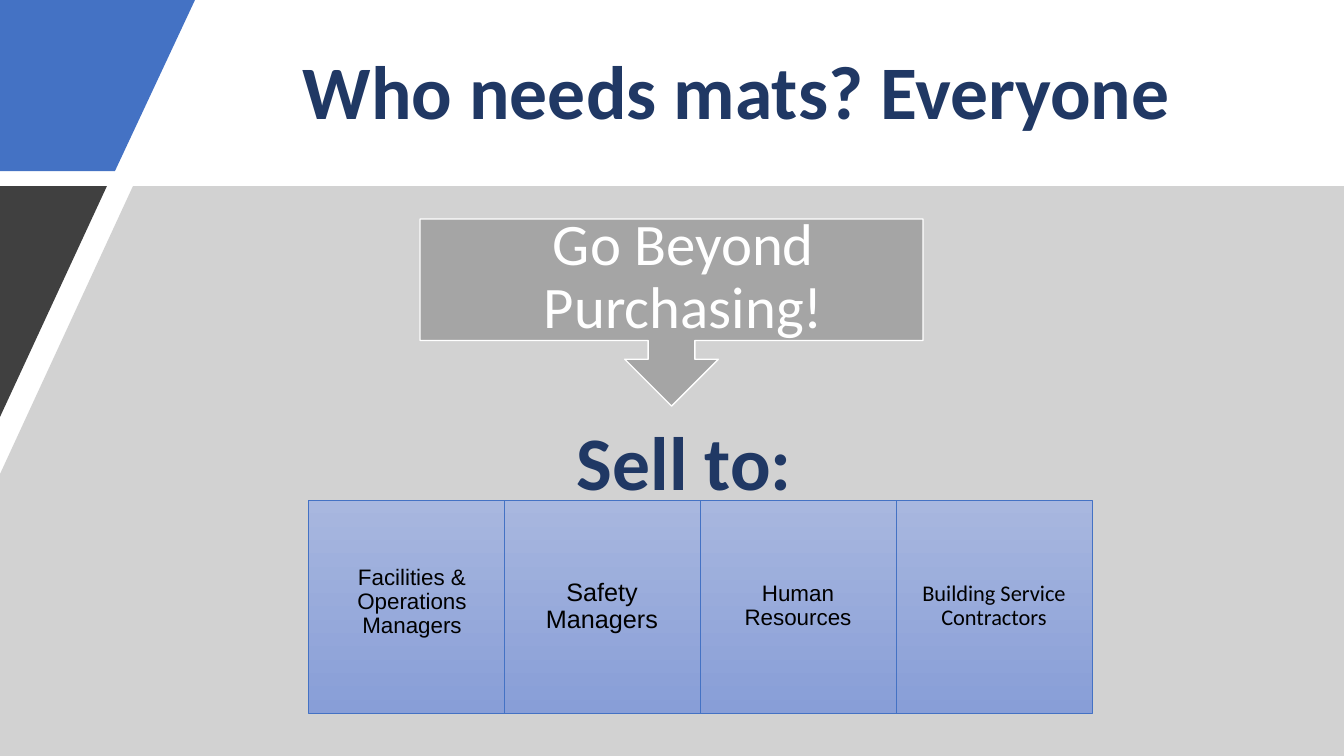
"""Build the "Who needs mats?" slide."""
from lxml import etree
from pptx import Presentation, util as u
from pptx.dml.color import RGBColor
from pptx.enum import shapes, text
from pptx.oxml.ns import qn

PX = 914400 / 100.8
W, H = 1344, 756
NAVY, WHITE, BLACK = "203864", "FFFFFF", "000000"

PANELS = [
    ([(0, 0), (195, 0), (115, 171), (0, 171)], "4472C4", 100),
    ([(133, 186), (W, 186), (W, H), (0, H), (0, 474)], "A6A6A6", 50),
    ([(0, 186), (107, 186), (0, 417)], "404040", 100),
]
HEADINGS = [
    ("Who needs mats? Everyone", (129, 18, 1215, 154), (10, 5, 10, 5), 54, NAVY, True, 0.9),
    ("Sell to:", (380, 409, 609, 102), (10, 5, 10, 5), 54, NAVY, True, 1.0),
    ("Go Beyond Purchasing!", (378, 202, 611, 152), (36, 33, 36, 33), 42, WHITE, False, 0.9),
]
CALLOUT = (420, 219, 503, 187)
BUYERS = [
    ("Facilities & Operations Managers", 16, "Arial", (20, 1, 8, 9)),
    ("Safety Managers", 18, "Arial", (8, 1, 8, 1)),
    ("Human Resources", 16, "Arial", (8, 1, 8, 1)),
    ("Building Service Contractors", 16, "Calibri", (8, 1, 8, 1)),
]
TILE_X, TILE_Y, TILE_W, TILE_H = 308, 500, 196, 213
TILE_TOP, TILE_BOTTOM, TILE_LINE = "A8B7DF", "889ED7", "4472C4"


def rgb(value):
    return RGBColor.from_string(value)


def px(values):
    return [round(v * PX) for v in values]


def write(sp, words, insets, size, font, color, bold=False, spacing=0.9):
    tf = sp.text_frame
    tf.word_wrap = True
    tf.vertical_anchor = text.MSO_ANCHOR.MIDDLE
    tf.margin_left, tf.margin_top, tf.margin_right, tf.margin_bottom = px(insets)
    tf.text = words
    p = tf.paragraphs[0]
    p.alignment = text.PP_ALIGN.CENTER
    p.line_spacing = spacing
    f = p.runs[0].font
    f.size, f.name, f.bold = u.Pt(size), font, bold
    f.color.rgb = rgb(color)


def add_panel(s, points, color, opacity):
    builder = s.shapes.build_freeform(*points[0], scale=PX)
    builder.add_line_segments(points[1:], close=True)
    sp = builder.convert_to_shape()
    sp.shadow.inherit = False
    sp.fill.solid()
    sp.fill.fore_color.rgb = rgb(color)
    sp.line.fill.background()
    if opacity < 100:
        clr = sp.fill._xPr.find(qn("a:solidFill"))[0]
        etree.SubElement(clr, qn("a:alpha"), val=str(opacity * 1000))


def add_box(s, kind, box, line, width):
    sp = s.shapes.add_shape(kind, *px(box))
    sp.shadow.inherit = False
    sp.line.color.rgb = rgb(line)
    sp.line.width = u.Pt(width)
    return sp


def main():
    prs = Presentation()
    prs.slide_width, prs.slide_height = px((W, H))
    s = prs.slides.add_slide(prs.slide_layouts[6])

    for panel in PANELS:
        add_panel(s, *panel)

    for i, (words, size, font, insets) in enumerate(BUYERS):
        box = (TILE_X + i * TILE_W, TILE_Y, TILE_W, TILE_H)
        tile = add_box(s, shapes.MSO_SHAPE.RECTANGLE, box, TILE_LINE, 0.5)
        tile.fill.gradient()
        tile.fill.gradient_angle = 270
        for stop, color in zip(tile.fill.gradient_stops, (TILE_TOP, TILE_BOTTOM)):
            stop.color.rgb = rgb(color)
        write(tile, words, insets, size, font, BLACK)

    callout = add_box(s, shapes.MSO_SHAPE.UP_ARROW_CALLOUT, CALLOUT, WHITE, 1)
    callout.rotation = 180
    callout.fill.solid()
    callout.fill.fore_color.rgb = rgb("A5A5A5")

    for words, box, insets, size, color, bold, spacing in HEADINGS:
        write(s.shapes.add_textbox(*px(box)), words, insets, size, "Calibri", color, bold, spacing)

    prs.save("out.pptx")


if __name__ == "__main__":
    main()
